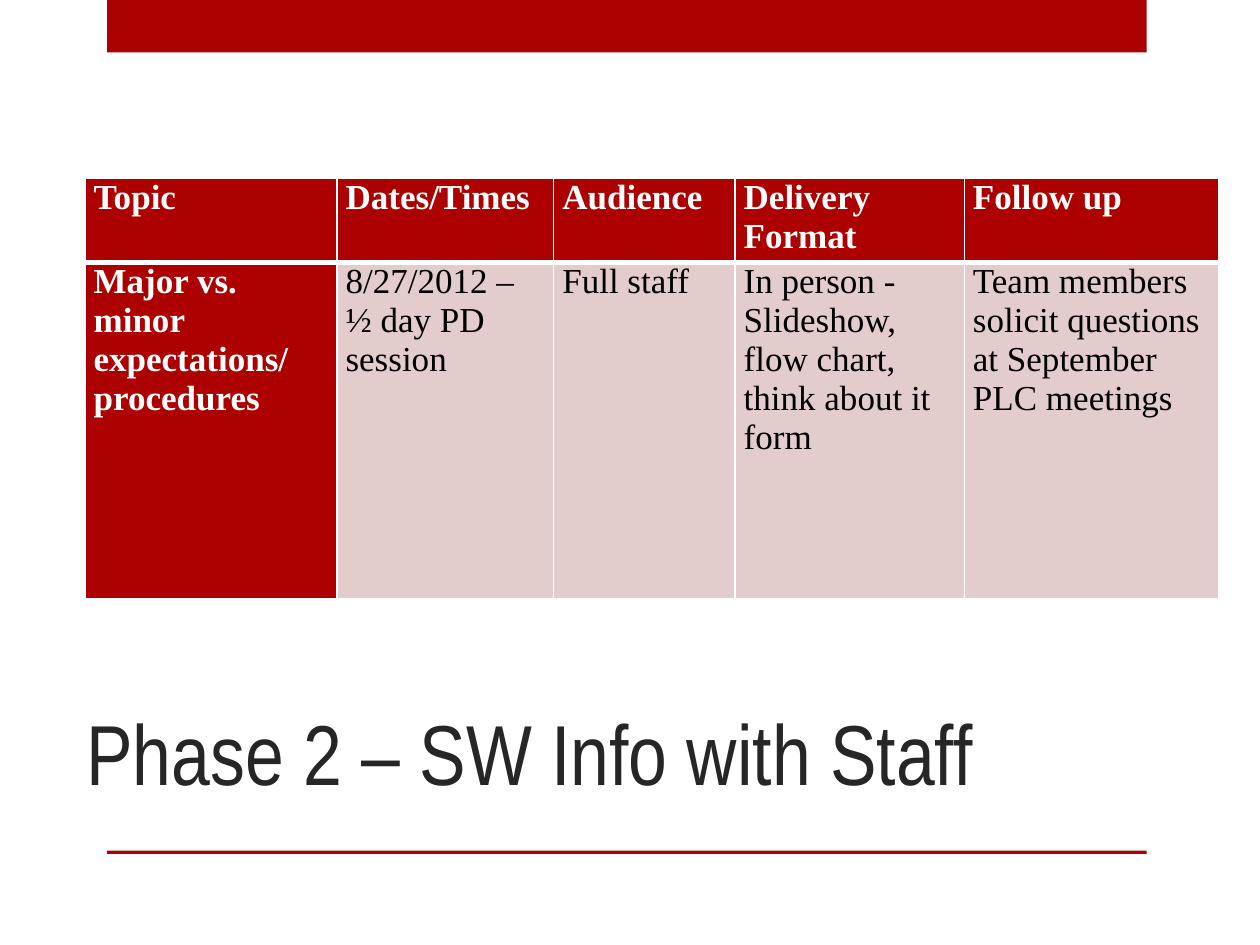
from dataclasses import dataclass

from lxml import etree
from pptx import Presentation
from pptx.dml.color import RGBColor
from pptx.enum.shapes import MSO_SHAPE
from pptx.enum.text import MSO_ANCHOR, MSO_AUTO_SIZE, PP_ALIGN
from pptx.oxml.ns import qn
from pptx.util import Pt

RECTANGLE = MSO_SHAPE.RECTANGLE
BOTTOM, TOP = MSO_ANCHOR.BOTTOM, MSO_ANCHOR.TOP
NO_AUTOFIT = MSO_AUTO_SIZE.NONE
LEFT = PP_ALIGN.LEFT
TITLE_ONLY = 5


@dataclass(frozen=True)
class Theme:
    red: str = "AD0101"
    blush: str = "E3CCCC"
    white: str = "FFFFFF"
    black: str = "000000"
    charcoal: str = "262626"
    title_font: str = "Arial Narrow"
    table_font: str = "Times New Roman"
    title_size: float = 48.6
    table_size: float = 20
    thin_rule: float = 1
    header_rule: float = 3


THEME = Theme()

HEADINGS = ["Topic", "Dates/Times", "Audience", "Delivery Format", "Follow up"]
SESSION = [
    ["Major vs. minor expectations/ procedures"],
    ["8/27/2012 – ½ day PD session"],
    ["Full staff"],
    ["In person -", "Slideshow, flow chart, think about it form"],
    ["Team members solicit questions at September PLC meetings"],
]
COLUMN_WIDTHS = [144, 123.84, 103.68, 131.04, 145.44]
ROW_HEIGHTS = [48, 192]


def add_run(paragraph, text, font_name, size, color, bold=False):
    paragraph.alignment = LEFT
    run = paragraph.add_run()
    run.text = text
    run.font.name = font_name
    run.font.size = Pt(size)
    run.font.bold = bold
    run.font.color.rgb = RGBColor.from_string(color)


def add_frame_bars(slide, left, top, width, height):
    """Place the red band at the top of the box and the thin rule at its foot."""
    band_height, rule_height = 30, 2
    for bar_top, bar_height in ((top, band_height),
                                (top + height - rule_height, rule_height)):
        bar = slide.shapes.add_shape(
            RECTANGLE, Pt(left), Pt(bar_top), Pt(width), Pt(bar_height))
        bar.shadow.inherit = False
        bar.fill.solid()
        bar.fill.fore_color.rgb = RGBColor.from_string(THEME.red)
        bar.line.fill.background()


def fill_title(slide, left, top, width, height):
    title = slide.shapes.title
    title.left, title.top = Pt(left), Pt(top)
    title.width, title.height = Pt(width), Pt(height)
    frame = title.text_frame
    frame.word_wrap = True
    frame.auto_size = NO_AUTOFIT
    frame.vertical_anchor = BOTTOM
    add_run(frame.paragraphs[0], "Phase 2 – SW Info with Staff",
            THEME.title_font, THEME.title_size, THEME.charcoal)


def set_borders(cell, top, bottom):
    """Draw white borders; the side ones are always thin."""
    properties = cell._tc.get_or_add_tcPr()
    widths = {"lnL": THEME.thin_rule, "lnR": THEME.thin_rule,
              "lnT": top, "lnB": bottom}
    for edge, width in widths.items():
        line = etree.SubElement(properties, qn(f"a:{edge}"), w=str(Pt(width)))
        paint = etree.SubElement(line, qn("a:solidFill"))
        etree.SubElement(paint, qn("a:srgbClr"), val=THEME.white)


def format_cell(cell, lines, is_header, is_topic):
    emphasized = is_header or is_topic
    cell.margin_left = cell.margin_right = Pt(5)
    cell.margin_top = cell.margin_bottom = Pt(0)
    cell.vertical_anchor = TOP
    if is_header:
        set_borders(cell, THEME.thin_rule, THEME.header_rule)
    else:
        set_borders(cell, THEME.header_rule, THEME.thin_rule)
    cell.fill.solid()
    cell.fill.fore_color.rgb = RGBColor.from_string(
        THEME.red if emphasized else THEME.blush)
    frame = cell.text_frame
    for index, line in enumerate(lines):
        paragraph = frame.add_paragraph() if index else frame.paragraphs[0]
        add_run(paragraph, line, THEME.table_font, THEME.table_size,
                THEME.white if emphasized else THEME.black, emphasized)


def add_schedule(slide, left, top, width, height):
    rows = [[[heading] for heading in HEADINGS], SESSION]
    schedule = slide.shapes.add_table(
        len(rows), len(HEADINGS), Pt(left), Pt(top), Pt(width), Pt(height)).table
    for column, share in zip(schedule.columns, COLUMN_WIDTHS):
        column.width = Pt(width * share / sum(COLUMN_WIDTHS))
    for row, share in zip(schedule.rows, ROW_HEIGHTS):
        row.height = Pt(height * share / sum(ROW_HEIGHTS))
    for r, row in enumerate(rows):
        for c, lines in enumerate(row):
            format_cell(schedule.cell(r, c), lines, r == 0, c == 0)


def main():
    deck = Presentation()
    deck.slide_width, deck.slide_height = Pt(720), Pt(540)
    slide = deck.slides.add_slide(deck.slide_layouts[TITLE_ONLY])
    add_frame_bars(slide, 61.2, 0, 594, 488)
    fill_title(slide, 42, 336, 612, 126)
    add_schedule(slide, 48.5, 102, 648, 240)
    deck.save("out.pptx")


if __name__ == "__main__":
    main()
